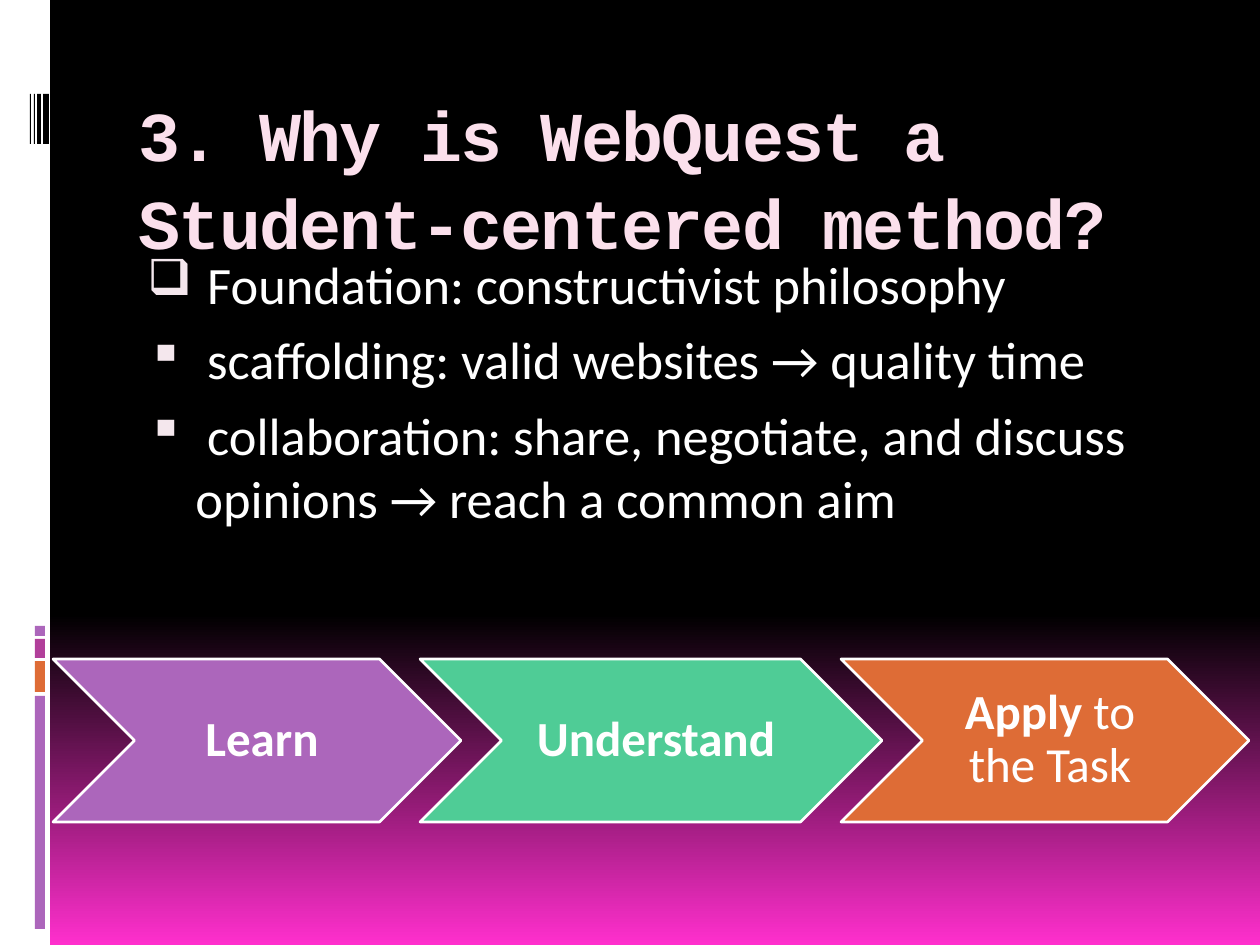
from copy import deepcopy
from lxml import etree
from pptx import Presentation
from pptx import util as u
from pptx.dml.color import RGBColor
from pptx.enum import shapes, text
from pptx.oxml.ns import qn

PX = 914400 / 126
COLORS = {
    "white": "FFFFFF", "black": "000000", "pink": "FF2FCD", "blush": "FBE0EC",
    "bullet": "F4E7ED", "purple": "AC66BB", "orange": "DE6C36",
    "magenta": "B13F9A", "green": "4FCC96",
}


def add_block(kind, box, color):
    block = page.shapes.add_shape(kind, *[round(n * PX) for n in box])
    block.shadow.inherit = False
    block.fill.solid()
    block.fill.fore_color.rgb = RGBColor.from_string(COLORS[color])
    block.line.fill.background()
    return block


def add_span(para, words, color, **formats):
    span = para.add_run()
    span.text = words
    span.font.color.rgb = RGBColor.from_string(COLORS[color])
    for name, value in formats.items():
        setattr(span.font, name, value)
    return span


deck = Presentation()
deck.slide_width, deck.slide_height = round(1260 * PX), round(945 * PX)
page = deck.slides.add_slide(deck.slide_layouts[5])

# Background: black down to 65 %, then fading to pink
fill = page.background.fill
fill.gradient()
fill.gradient_angle = 270
stop_list = page.background._cSld.find(".//" + qn("a:gsLst"))
for stop, place, color in zip(fill.gradient_stops, (0.65, 1), ("black", "pink")):
    stop.position = place
    stop.color.rgb = RGBColor.from_string(COLORS[color])
first_stop = deepcopy(stop_list[0])
first_stop.set("pos", "0")
stop_list.insert(0, first_stop)

# Side strip with coloured bars and thin stripes
RECT = shapes.MSO_SHAPE.RECTANGLE
add_block(RECT, (0, 0, 50, 945), "white")
for top, height, color in ((696, 233, "purple"), (661, 31, "orange"),
                           (639, 19, "magenta"), (626, 10, "purple")):
    add_block(RECT, (35, top, 10, height), color)
for left, width in ((43, 6), (37, 4), (34, 1), (30, 1)):
    add_block(RECT, (left, 94, width, 50), "black")

# Title
title = page.shapes.title
title.left, title.top, title.width, title.height = [
    round(n * PX) for n in (126, 71, 1071, 126)]
frame = title.text_frame
for name, value in {"word_wrap": True, "auto_size": text.MSO_AUTO_SIZE.NONE,
                    "vertical_anchor": text.MSO_ANCHOR.TOP,
                    "margin_top": round(16 * PX)}.items():
    setattr(frame, name, value)
para = frame.paragraphs[0]
para.alignment = text.PP_ALIGN.LEFT
para.line_spacing = 1.05
span = add_span(para, "3. Why is WebQuest a Student-centered method?", "blush",
                name="Courier New", size=u.Pt(40), bold=True)
span.font._element.set("spc", "-100")

# Bulleted points
body = page.shapes.add_textbox(*[round(n * PX) for n in (126, 246, 1071, 630)])
frame = body.text_frame
frame.word_wrap = True
points = (
    ("❑", " Foundation: constructivist philosophy"),
    ("▪", " scaffolding: valid websites → quality time"),
    ("▪", " collaboration: share, negotiate, and discuss opinions → reach a common aim"),
)
for index, (mark, words) in enumerate(points):
    para = frame.add_paragraph() if index else frame.paragraphs[0]
    para.space_before = u.Pt(7)
    add_span(para, words, "white", name="Calibri", size=u.Pt(30))
    settings = para._p.get_or_add_pPr()
    settings.set("marL", str(round(57 * PX)))
    settings.set("indent", str(round(-48 * PX)))
    bullet_color = etree.SubElement(settings, qn("a:buClr"))
    etree.SubElement(bullet_color, qn("a:srgbClr"), val=COLORS["bullet"])
    etree.SubElement(settings, qn("a:buSzPct"), val="95000")
    etree.SubElement(settings, qn("a:buChar"), char=mark)

# Chevron process, each step overlapping the one before
left = 53
for width, color, strong, rest in ((408, "purple", "Learn", ""),
                                   (462, "green", "Understand", ""),
                                   (408, "orange", "Apply", " to the Task")):
    step = add_block(shapes.MSO_SHAPE.CHEVRON, (left, 659, width, 163), color)
    step.line.color.rgb = RGBColor.from_string(COLORS["white"])
    step.line.width = u.Pt(1.5)
    frame = step.text_frame
    for name, value in {"word_wrap": True, "vertical_anchor": text.MSO_ANCHOR.MIDDLE,
                        "margin_left": round(15 * PX), "margin_right": round(5 * PX),
                        "margin_top": round(5 * PX),
                        "margin_bottom": round(5 * PX)}.items():
        setattr(frame, name, value)
    para = frame.paragraphs[0]
    para.alignment = text.PP_ALIGN.CENTER
    para.line_spacing = 0.9
    add_span(para, strong, "white", name="Calibri", size=u.Pt(28), bold=True)
    if rest:
        add_span(para, rest, "white", name="Calibri", size=u.Pt(28), bold=False)
    left += width - 41

deck.save("out.pptx")
